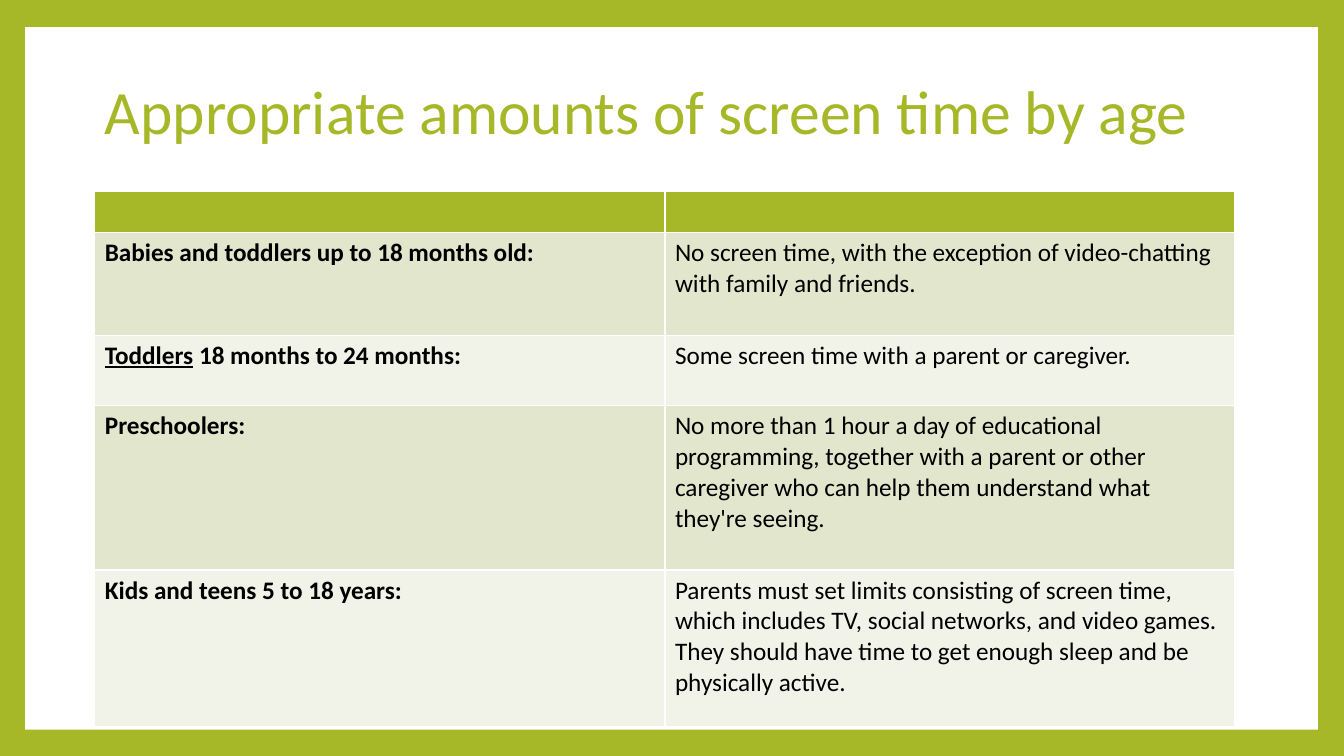
from pptx import Presentation
from pptx.dml.color import RGBColor
from pptx.enum.shapes import MSO_SHAPE
from pptx.enum.text import MSO_ANCHOR, MSO_AUTO_SIZE, PP_ALIGN
from pptx.util import Inches, Pt

GREEN = "A6B727"
ROW_FILLS = ["E1E6CD", "F1F3E8"]
ROW_HEIGHTS = [0.39, 1.02, 0.7, 1.63, 1.55]
GUIDELINES = [
    ([("Babies and toddlers up to 18 months old:", False)],
     "No screen time, with the exception of video-chatting with family and friends."),
    ([("Toddlers", True), (" 18 months to 24 months:", False)],
     "Some screen time with a parent or caregiver."),
    ([("Preschoolers:", False)],
     "No more than 1 hour a day of educational programming, together with a parent "
     "or other caregiver who can help them understand what they're seeing."),
    ([("Kids and teens 5 to 18 years:", False)],
     "Parents must set limits consisting of screen time, which includes TV, social "
     "networks, and video games. They should have time to get enough sleep and be "
     "physically active."),
]


def fill_solid(fill, color):
    fill.solid()
    fill.fore_color.rgb = RGBColor.from_string(color)


def add_text(paragraph, text, size=18, color="000000", bold=False, underline=False):
    run = paragraph.add_run()
    run.text = text
    run.font.name = "Calibri"
    run.font.size = Pt(size)
    run.font.bold = bold
    run.font.underline = underline
    run.font.color.rgb = RGBColor.from_string(color)


presentation = Presentation()
presentation.slide_width = Inches(13.33)
presentation.slide_height = Inches(7.5)
slide = presentation.slides.add_slide(presentation.slide_layouts[5])
fill_solid(slide.background.fill, GREEN)

panel = slide.shapes.add_shape(
    MSO_SHAPE.RECTANGLE, Inches(0.25), Inches(0.27), Inches(12.82), Inches(6.97))
panel.shadow.inherit = False
fill_solid(panel.fill, "FFFFFF")
panel.line.fill.background()

title = slide.shapes.title
panel._element.addnext(title._element)
title.left, title.top = Inches(0.94), Inches(0.67)
title.width, title.height = Inches(11.31), Inches(0.93)
title_frame = title.text_frame
title_frame.word_wrap = True
title_frame.auto_size = MSO_AUTO_SIZE.NONE
title_frame.vertical_anchor = MSO_ANCHOR.MIDDLE
heading = title_frame.paragraphs[0]
heading.alignment = PP_ALIGN.LEFT
heading.line_spacing = 0.9
add_text(heading, "Appropriate amounts of screen time by age", size=44, color=GREEN)

table = slide.shapes.add_table(
    len(ROW_HEIGHTS), 2, Inches(0.94), Inches(1.9),
    Inches(11.31), Inches(sum(ROW_HEIGHTS))).table
for row, height in zip(table.rows, ROW_HEIGHTS):
    row.height = Inches(height)
for cell in table.rows[0].cells:
    fill_solid(cell.fill, GREEN)

for index, (age_group, advice) in enumerate(GUIDELINES):
    age_cell, advice_cell = table.rows[index + 1].cells
    for cell in (age_cell, advice_cell):
        fill_solid(cell.fill, ROW_FILLS[index % 2])
    for text, underline in age_group:
        add_text(age_cell.text_frame.paragraphs[0], text, bold=True, underline=underline)
    add_text(advice_cell.text_frame.paragraphs[0], advice)

presentation.save("out.pptx")
